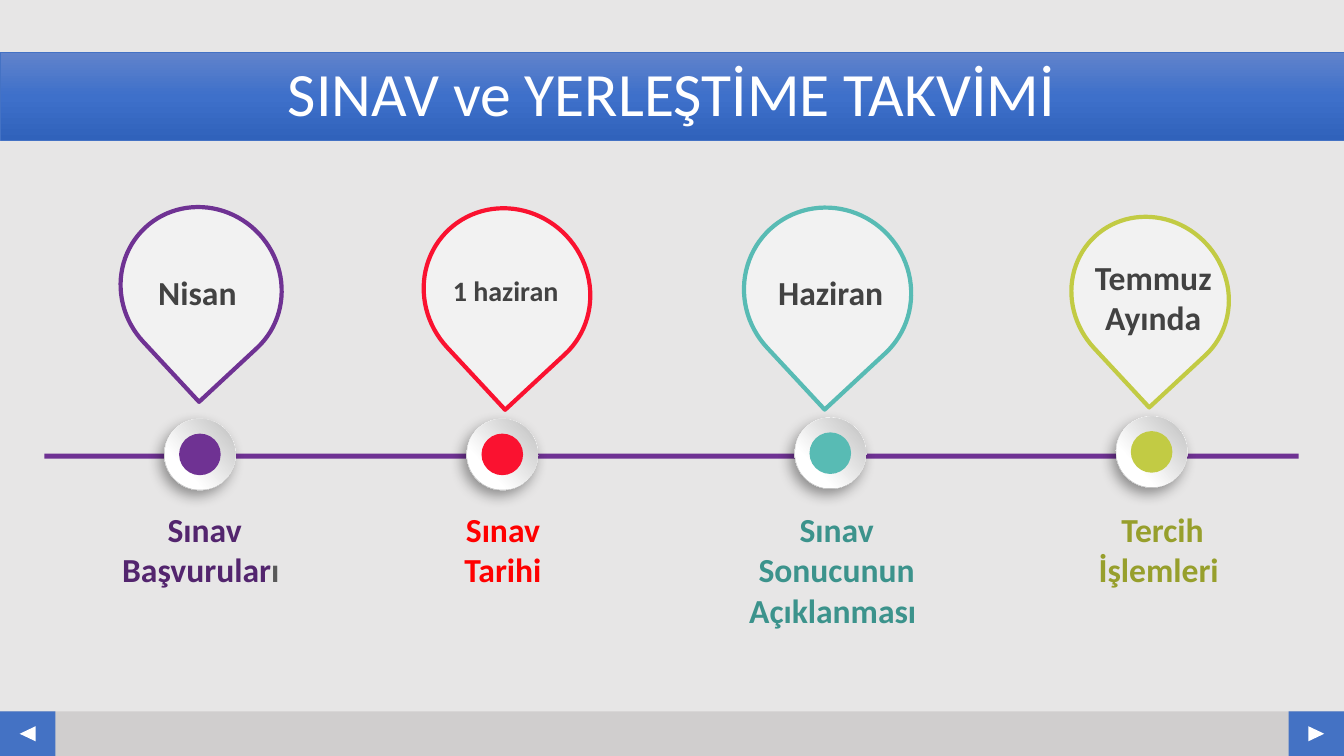
from lxml.etree import SubElement
from pptx import Presentation
from pptx.dml.color import RGBColor
from pptx.enum.shapes import MSO_SHAPE
from pptx.enum.text import MSO_ANCHOR, PP_ALIGN
from pptx.oxml.ns import qn
from pptx.util import Inches, Pt

COLUMNS, ROWS = 160, 90  # square cells, twelve to the inch
BLUE, WHITE, PALE, GREY = "4472C4", "FFFFFF", "F2F2F2", "424242"


def color(value):
    return RGBColor.from_string(value)


def cells(count):
    return Inches(count / 12)


class Timeline:
    font = "Calibri"

    def __init__(self, slide, background):
        self.slide = slide
        slide.background.fill.solid()
        slide.background.fill.fore_color.rgb = color(background)

    def shape(self, kind, column, row, width, height, fill, line=None, weight=1, rotation=0):
        """Fill is one colour, or (stops, angle) for a gradient."""
        shape = self.slide.shapes.add_shape(
            kind, cells(column), cells(row), cells(width), cells(height))
        shape.shadow.inherit = False
        shape.rotation = rotation
        if isinstance(fill, str):
            shape.fill.solid()
            shape.fill.fore_color.rgb = color(fill)
        else:
            self.gradient(shape, *fill)
        if line:
            shape.line.color.rgb = color(line)
            shape.line.width = Pt(weight)
        else:
            shape.line.fill.background()
        return shape

    def centered(self, kind, column, row, width, height, fill, **style):
        return self.shape(kind, column - width / 2, row - height / 2, width, height, fill, **style)

    def gradient(self, shape, stops, angle):
        shape.fill.gradient()
        shape.fill.gradient_angle = 360 - angle
        stop_list = shape.element.spPr.find(qn("a:gradFill")).find(qn("a:gsLst"))
        for stop in list(stop_list):
            stop_list.remove(stop)
        for position, value in stops:
            stop = SubElement(stop_list, qn("a:gs"), pos=str(position * 1000))
            SubElement(stop, qn("a:srgbClr"), val=value)

    def shadow(self, shape, blur, distance, direction, opacity):
        effects = shape.element.spPr.find(qn("a:effectLst"))
        outer = SubElement(effects, qn("a:outerShdw"), blurRad=str(Pt(blur)), dist=str(Pt(distance)),
                           dir=str(direction * 60000), algn="ctr", rotWithShape="0")
        black = SubElement(outer, qn("a:srgbClr"), val="000000")
        SubElement(black, qn("a:alpha"), val=str(opacity * 1000))

    def add_text(self, shape, paragraphs, size, bold=True, anchor=MSO_ANCHOR.MIDDLE, spacing=1.0):
        """Each paragraph is a list of (text, colour) runs."""
        frame = shape.text_frame
        frame.word_wrap = True
        frame.vertical_anchor = anchor
        for index, runs in enumerate(paragraphs):
            paragraph = frame.add_paragraph() if index else frame.paragraphs[0]
            paragraph.alignment = PP_ALIGN.CENTER
            paragraph.line_spacing = spacing
            for text, value in runs:
                run = paragraph.add_run()
                run.text = text
                run.font.name, run.font.size, run.font.bold = self.font, Pt(size), bold
                run.font.color.rgb = color(value)

    def text_box(self, center, row, width, height, paragraphs, size, **style):
        box = self.slide.shapes.add_textbox(
            cells(center - width / 2), cells(row), cells(width), cells(height))
        self.add_text(box, paragraphs, size, **style)

    def knob(self, column, row, fill):
        rim = self.centered(MSO_SHAPE.OVAL, column, row, 8.5, 8.5,
                            (((17, WHITE), (88, "B8B8B8")), 45), rotation=62.3)
        self.shadow(rim, 10, 5, 123, 39)
        self.centered(MSO_SHAPE.OVAL, column, row, 8.4, 8.4,
                      (((29, WHITE), (98, "BFBFBF")), 45), rotation=273)
        self.centered(MSO_SHAPE.OVAL, column, row, 4.95, 4.95, fill)

    def pin(self, column, row, width, height, line):
        self.centered(MSO_SHAPE.TEAR, column, row, width, height, PALE,
                      line=line, weight=3, rotation=137.1)


# Each milestone: colour, knob centre, pin box, month text, label text
MILESTONES = [
    dict(color="6F3293", knob=(23.8, 54.1), pin=(23.94, 34.26, 18.84, 19.56),
         month=["Nisan"], month_at=(23.5, 34.8), size=24,
         label=[("Sınav Başvurular", "53256E"), ("ı ", "595959")], label_at=(24.36, 22.8)),
    dict(color="FA1230", knob=(59.8, 54.1), pin=(60.36, 34.74, 19.44, 20.28),
         month=["1 haziran"], month_at=(60.2, 34.6), size=20,
         label=[("Sınav Tarihi", "FF0000")], label_at=(59.88, 20.2)),
    dict(color="58BBB4", knob=(98.85, 53.95), pin=(98.52, 34.68, 19.68, 20.16),
         month=["Haziran"], month_at=(98.9, 34.8), size=24,
         label=[("Sınav Sonucunun Açıklanması ", "3C938C")], label_at=(99.6, 25.9)),
    dict(color="C2CB44", knob=(137.1, 53.8), pin=(136.92, 35.22, 18.24, 19.32),
         month=["Temmuz", "Ayında"], month_at=(137.3, 35.4), size=24,
         label=[("Tercih İşlemleri ", "979F2C")], label_at=(138.4, 18.6)),
]


def main():
    presentation = Presentation()
    presentation.slide_width, presentation.slide_height = cells(COLUMNS), cells(ROWS)
    slide = presentation.slides.add_slide(presentation.slide_layouts[6])
    timeline = Timeline(slide, "E7E6E6")

    # Footer bar with a navigation arrow at each end
    footer, corner = 84.7, 6.6
    timeline.shape(MSO_SHAPE.RECTANGLE, 0, footer, COLUMNS, ROWS - footer, "D0CECE")
    for left, rotation in ((0, 270), (COLUMNS - corner, 90)):
        timeline.shape(MSO_SHAPE.RECTANGLE, left, footer, corner, ROWS - footer, BLUE)
        timeline.centered(MSO_SHAPE.ISOSCELES_TRIANGLE, left + corner / 2, 87.35, 1.8, 1.9,
                          WHITE, rotation=rotation)

    # Title band
    band = timeline.shape(MSO_SHAPE.RECTANGLE, 0, 6.24, COLUMNS, 10.44,
                          (((0, "6183CB"), (50, "3E70CA"), (100, "3062BB")), 90),
                          line=BLUE, weight=0.5)
    timeline.add_text(band, [[("SINAV ve YERLEŞTİME TAKVİMİ", WHITE)]], 44, bold=False, spacing=0.9)

    # Time axis
    timeline.shape(MSO_SHAPE.RECTANGLE, 5.3, 54, 149.3, 0.6, "6F3293")

    # Milestones
    for milestone in MILESTONES:
        timeline.knob(*milestone["knob"], milestone["color"])
        timeline.pin(*milestone["pin"], milestone["color"])
        column, row = milestone["month_at"]
        timeline.text_box(column, row - 5.5, 18.8, 11,
                          [[(line, GREY)] for line in milestone["month"]], milestone["size"])
        column, width = milestone["label_at"]
        timeline.text_box(column, 60, width, 10.9, [milestone["label"]], 24, anchor=MSO_ANCHOR.TOP)

    presentation.save("out.pptx")


if __name__ == "__main__":
    main()
